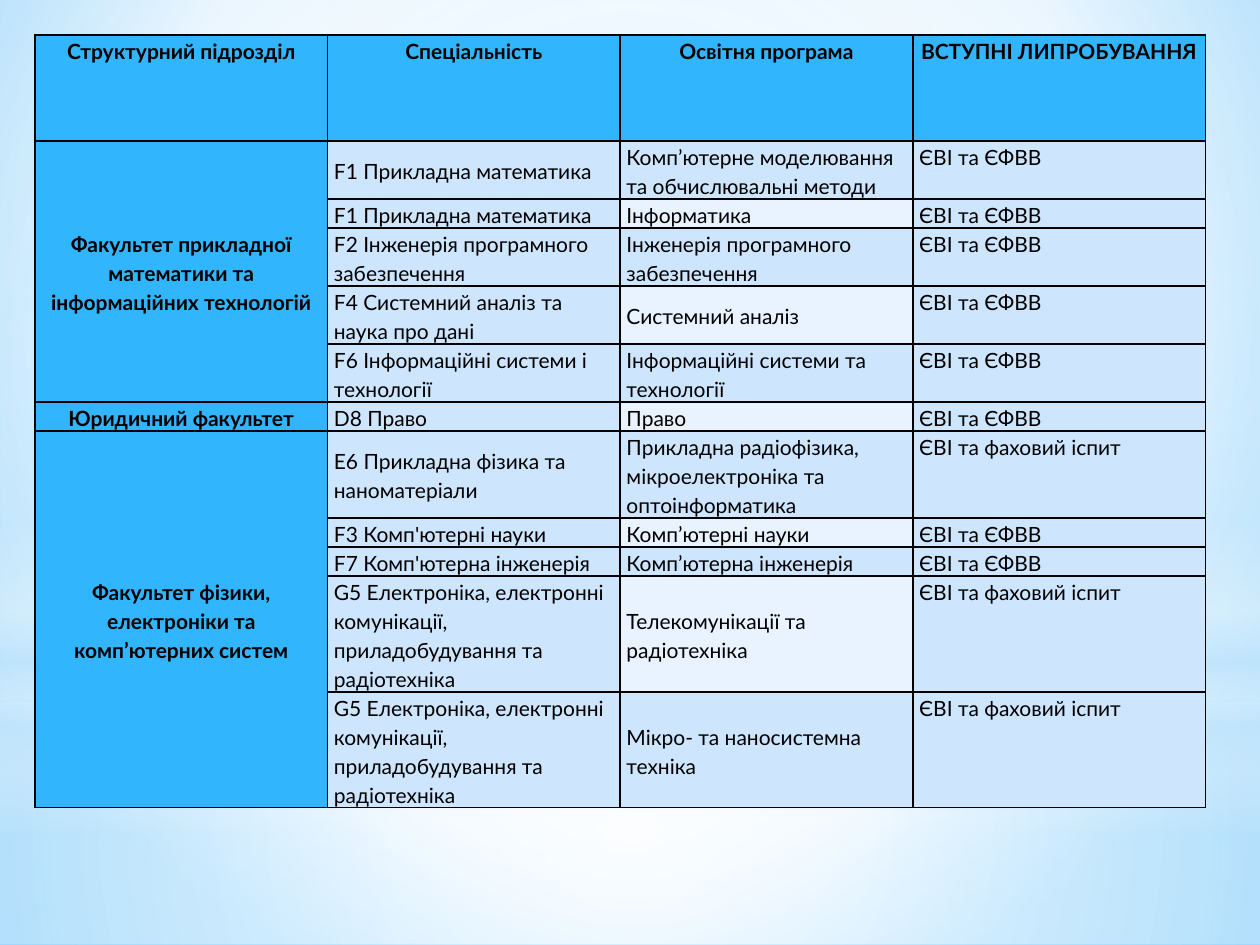
from lxml.etree import SubElement
from pptx import Presentation
from pptx.dml.color import RGBColor
from pptx.enum.shapes import MSO_SHAPE
from pptx.enum.text import MSO_ANCHOR, PP_ALIGN
from pptx.oxml.ns import qn
from pptx.util import Pt

BLACK = RGBColor(0x00, 0x00, 0x00)
WHITE = RGBColor(0xFF, 0xFF, 0xFF)
BLUE = RGBColor(0x31, 0xB6, 0xFD)
LIGHT = RGBColor(0xCE, 0xE5, 0xFE)
PALE = RGBColor(0xE8, 0xF3, 0xFF)
SKY = RGBColor(0xC6, 0xE7, 0xFC)
SKY_INNER = RGBColor(0xB0, 0xE0, 0xFF)
SKY_OUTER = RGBColor(0x6B, 0xC5, 0xFF)

WIDTH, HEIGHT = 720, 540
CENTRE = (50, 50, 50, 50)
COLUMN_WIDTH = 167.2
HEADER_HEIGHT = 60.5
LINE_HEIGHT = 11.5

HEADERS = ["Структурний підрозділ", "Спеціальність", "Освітня програма",
           "ВСТУПНІ ЛИПРОБУВАННЯ"]
UNIFIED = "ЄВІ та ЄФВВ"
SPECIAL = "ЄВІ та фаховий іспит"
ELECTRONICS = "G5 Електроніка, електронні комунікації, приладобудування та радіотехніка"

# Faculty: (specialty, programme, exams, row height in lines)
FACULTIES = {
    "Факультет прикладної математики та інформаційних технологій": [
        ("F1 Прикладна математика",
         "Комп’ютерне моделювання та обчислювальні методи", UNIFIED, 2),
        ("F1 Прикладна математика", "Інформатика", UNIFIED, 1),
        ("F2 Інженерія програмного забезпечення",
         "Інженерія програмного забезпечення", UNIFIED, 2),
        ("F4 Системний аналіз та наука про дані", "Системний аналіз", UNIFIED, 2),
        ("F6 Інформаційні системи і технології",
         "Інформаційні системи та технології", UNIFIED, 2),
    ],
    "Юридичний факультет": [("D8 Право", "Право", UNIFIED, 1)],
    "Факультет фізики, електроніки та комп’ютерних систем": [
        ("E6 Прикладна фізика та наноматеріали",
         "Прикладна радіофізика, мікроелектроніка та оптоінформатика", SPECIAL, 3),
        ("F3 Комп'ютерні науки", "Комп’ютерні науки", UNIFIED, 1),
        ("F7 Комп'ютерна інженерія", "Комп’ютерна інженерія", UNIFIED, 1),
        (ELECTRONICS, "Телекомунікації та радіотехніка", SPECIAL, 3),
        (ELECTRONICS, "Мікро- та наносистемна техніка", SPECIAL, 3),
    ],
}


class SlideBuilder:
    font_name = "Lato"
    font_size = Pt(12)
    line_spacing = 1.15
    side_margin = Pt(3.6)

    def __init__(self, slide):
        self.slide = slide

    def gradient(self, fill, owner, stops, focus=None):
        """Stops are (position %, colour, opacity %); focus insets make it radial."""
        fill.gradient()
        grad = owner.find(".//" + qn("a:gradFill"))
        for child in list(grad):
            grad.remove(child)
        stop_list = SubElement(grad, qn("a:gsLst"))
        for position, colour, opacity in stops:
            stop = SubElement(stop_list, qn("a:gs"), pos=str(position * 1000))
            tint = SubElement(stop, qn("a:srgbClr"), val=str(colour))
            if opacity < 100:
                SubElement(tint, qn("a:alpha"), val=str(opacity * 1000))
        if focus:
            radial = SubElement(grad, qn("a:path"), {"path": "circle"})
            insets = {side: str(inset * 1000) for side, inset in zip("ltrb", focus)}
            SubElement(radial, qn("a:fillToRect"), insets)
        else:
            SubElement(grad, qn("a:lin"), ang="5400000", scaled="0")

    def background(self, stops, focus):
        self.gradient(self.slide.background.fill, self.slide.element, stops, focus)

    def glow(self, kind, top, height, stops, focus=None):
        shape = self.slide.shapes.add_shape(kind, 0, Pt(top), Pt(WIDTH), Pt(height))
        shape.shadow.inherit = False
        shape.line.fill.background()
        self.gradient(shape.fill, shape.element, stops, focus)

    def table(self, left, top, height, column_width, row_heights, column_count):
        frame = self.slide.shapes.add_table(
            len(row_heights), column_count, Pt(left), Pt(top),
            Pt(column_width * column_count), Pt(height))
        grid = frame.table
        grid.first_row = grid.horz_banding = False
        for column in grid.columns:
            column.width = Pt(column_width)
        for row, row_height in zip(grid.rows, row_heights):
            row.height = Pt(row_height)
        frame.height = Pt(height)
        return grid

    def cell(self, cell, text, colour, anchor=MSO_ANCHOR.TOP, heading=False, after=None):
        cell.text = text
        cell.vertical_anchor = anchor
        cell.margin_left = cell.margin_right = self.side_margin
        cell.margin_top = cell.margin_bottom = 0
        paragraph = cell.text_frame.paragraphs[0]
        paragraph.alignment = PP_ALIGN.CENTER if heading else PP_ALIGN.LEFT
        paragraph.line_spacing = self.line_spacing
        paragraph.space_after = after
        font = paragraph.font
        font.name, font.size, font.bold = self.font_name, self.font_size, heading
        font.color.rgb = BLACK
        self.borders(cell)
        cell.fill.solid()
        cell.fill.fore_color.rgb = colour

    def borders(self, cell):
        properties = cell._tc.get_or_add_tcPr()
        for side in ("a:lnL", "a:lnR", "a:lnT", "a:lnB"):
            line = SubElement(properties, qn(side), w=str(Pt(1)))
            solid = SubElement(line, qn("a:solidFill"))
            SubElement(solid, qn("a:srgbClr"), val=str(BLACK))


def main():
    presentation = Presentation()
    presentation.slide_width, presentation.slide_height = Pt(WIDTH), Pt(HEIGHT)
    builder = SlideBuilder(presentation.slides.add_slide(presentation.slide_layouts[6]))

    # Background and soft glows
    builder.background([(0, SKY_INNER, 100), (60, WHITE, 100), (100, SKY_OUTER, 100)],
                       (20, 10, 20, 60))
    builder.glow(MSO_SHAPE.RECTANGLE, 402, 138,
                 [(0, WHITE, 91), (37, WHITE, 76), (100, SKY, 79)], CENTRE)
    builder.glow(MSO_SHAPE.RECTANGLE, 0, 402,
                 [(0, WHITE, 89), (48, WHITE, 62), (100, SKY, 79)], CENTRE)
    builder.glow(MSO_SHAPE.RECTANGLE, 297, 180,
                 [(0, WHITE, 0), (29, WHITE, 30), (45, SKY, 40),
                  (55, WHITE, 26), (65, SKY, 60), (100, WHITE, 0)])
    builder.glow(MSO_SHAPE.OVAL, 126, 402, [(0, WHITE, 100), (56, WHITE, 0)], CENTRE)

    # Table header
    programmes = [entry for entries in FACULTIES.values() for entry in entries]
    heights = [HEADER_HEIGHT] + [LINE_HEIGHT * entry[-1] for entry in programmes]
    admissions = builder.table(20, 20, 441.4, COLUMN_WIDTH, heights, len(HEADERS))
    for column, header in enumerate(HEADERS):
        builder.cell(admissions.cell(0, column), header, BLUE, heading=True)

    # Programmes, with every second programme cell paler
    for row, (specialty, programme, exams, _) in enumerate(programmes, start=1):
        builder.cell(admissions.cell(row, 1), specialty, LIGHT, MSO_ANCHOR.MIDDLE)
        builder.cell(admissions.cell(row, 2), programme, LIGHT if row % 2 else PALE,
                     MSO_ANCHOR.MIDDLE)
        builder.cell(admissions.cell(row, 3), exams, LIGHT,
                     after=Pt(10) if exams == UNIFIED else None)

    # Faculties, each spanning its programmes
    first = 1
    for faculty, entries in FACULTIES.items():
        last = first + len(entries) - 1
        anchor = MSO_ANCHOR.MIDDLE if last > first else MSO_ANCHOR.TOP
        for row in range(first, last + 1):
            builder.cell(admissions.cell(row, 0), faculty if row == first else "",
                         BLUE, anchor, heading=True)
        if last > first:
            admissions.cell(first, 0).merge(admissions.cell(last, 0))
        first = last + 1

    presentation.save("out.pptx")


if __name__ == "__main__":
    main()
